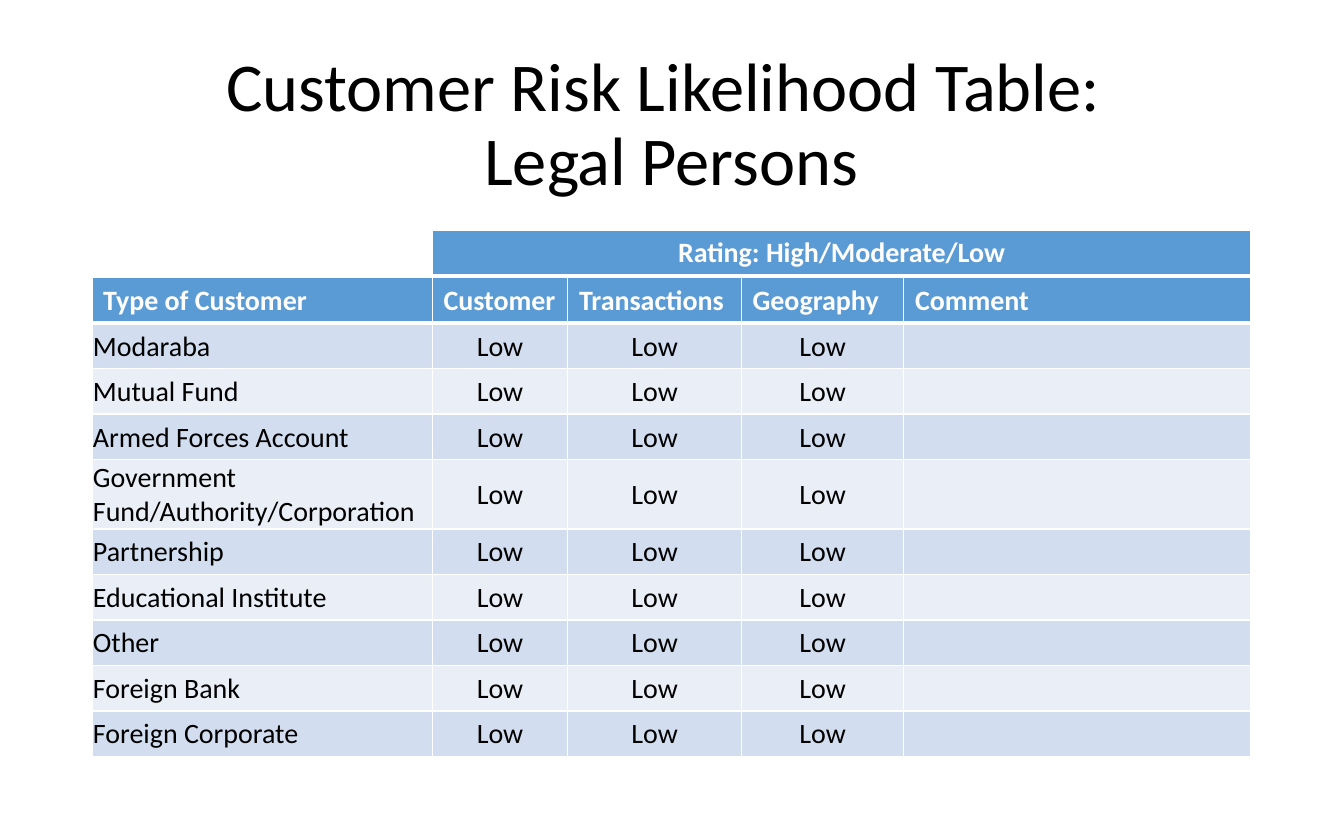
import pptx
import pptx.util
import pptx.dml.color
import pptx.enum.text
from lxml import etree
import pptx.oxml.ns

COLORS = {"white": "FFFFFF", "black": "000000", "header": "5B9BD5",
          "odd": "D2DEEF", "even": "EAEFF7"}
ALIGN = pptx.enum.text.PP_ALIGN
ANCHOR = pptx.enum.text.MSO_ANCHOR


def rgb(name):
    return pptx.dml.color.RGBColor.from_string(COLORS[name])


class Deck:
    """Holds the style and the current slide; lengths are grid units."""
    COLUMNS, ROWS = 120, 75
    FONT, TITLE_SIZE, TABLE_SIZE = "Calibri", 44, 18

    def __init__(self, width, height):
        self.prs = pptx.Presentation()
        self.prs.slide_width = pptx.util.Inches(width)
        self.prs.slide_height = pptx.util.Inches(height)
        self.s = self.prs.slides.add_slide(self.prs.slide_layouts[5])

    def x(self, columns):
        return round(self.prs.slide_width * columns / self.COLUMNS)

    def y(self, rows):
        return round(self.prs.slide_height * rows / self.ROWS)

    def style(self, p, size, color, align, bold=False):
        p.alignment = align
        p.font.name = self.FONT
        p.font.size = pptx.util.Pt(size)
        p.font.bold = bold
        p.font.color.rgb = rgb(color)

    def title(self, text, left, top, width, height):
        sp = self.s.shapes.title
        sp.left, sp.top = self.x(left), self.y(top)
        sp.width, sp.height = self.x(width), self.y(height)
        tf = sp.text_frame
        tf.text = text
        tf.word_wrap = True
        tf.auto_size = pptx.enum.text.MSO_AUTO_SIZE.NONE
        tf.vertical_anchor = ANCHOR.MIDDLE
        p = tf.paragraphs[0]
        p.line_spacing = 0.9
        self.style(p, self.TITLE_SIZE, "black", ALIGN.CENTER)

    def table(self, rows, left, top, widths, row_height, header_align=ALIGN.LEFT):
        frame = self.s.shapes.add_table(
            len(rows), len(widths), self.x(left), self.y(top),
            self.x(sum(widths)), self.y(row_height * len(rows)))
        table = frame.table
        for column, width in zip(table.columns, widths):
            column.width = self.x(width)
        for i, values in enumerate(rows):
            table.rows[i].height = self.y(row_height)
            for j, value in enumerate(values):
                cell = table.cell(i, j)
                if i == 0:
                    self.cell(cell, value, "header", "white", header_align, True)
                else:
                    self.cell(cell, value, "odd" if i % 2 else "even", "black",
                              ALIGN.CENTER if j else ALIGN.LEFT)

    def cell(self, cell, text, fill, color, align, header=False):
        cell.text = text
        self.style(cell.text_frame.paragraphs[0], self.TABLE_SIZE, color, align, header)
        cell.fill.solid()
        cell.fill.fore_color.rgb = rgb(fill)
        if text and not header:
            cell.vertical_anchor = ANCHOR.MIDDLE
            cell.margin_left = cell.margin_right = cell.margin_top = pptx.util.Inches(0.01)
            cell.margin_bottom = 0
        self.borders(cell, 3 if header else 1)

    def borders(self, cell, bottom):
        qn = pptx.oxml.ns.qn
        tcPr = cell._tc.get_or_add_tcPr()
        sides = {"lnL": 1, "lnR": 1, "lnT": 1, "lnB": bottom}
        for i, (side, width) in enumerate(sides.items()):
            ln = etree.Element(qn("a:" + side), w=str(pptx.util.Pt(width)))
            solid = etree.SubElement(ln, qn("a:solidFill"))
            etree.SubElement(solid, qn("a:srgbClr"), val=COLORS["white"])
            tcPr.insert(i, ln)


def main():
    deck = Deck(12, 7.5)
    left, row_height = 8.2, 4.06
    widths = [30.4, 12.1, 15.5, 14.5, 31]

    # Title
    deck.title("Customer Risk Likelihood Table: \vLegal Persons", left, 4, sum(widths), 14.5)

    # Ratings by customer type
    customers = ["Modaraba", "Mutual Fund", "Armed Forces Account",
                 "Government Fund/Authority/Corporation", "Partnership",
                 "Educational Institute", "Other", "Foreign Bank", "Foreign Corporate"]
    rows = [["Type of Customer", "Customer", "Transactions", "Geography", "Comment"]]
    rows += [[customer] + ["Low"] * 3 + [""] for customer in customers]
    deck.table(rows, left, 24.8, widths, row_height)

    # Heading band above the rating columns
    deck.table([["Rating: High/Moderate/Low"]], left + widths[0], 20.6,
               [sum(widths[1:])], row_height, ALIGN.CENTER)

    deck.prs.save("out.pptx")


if __name__ == "__main__":
    main()
